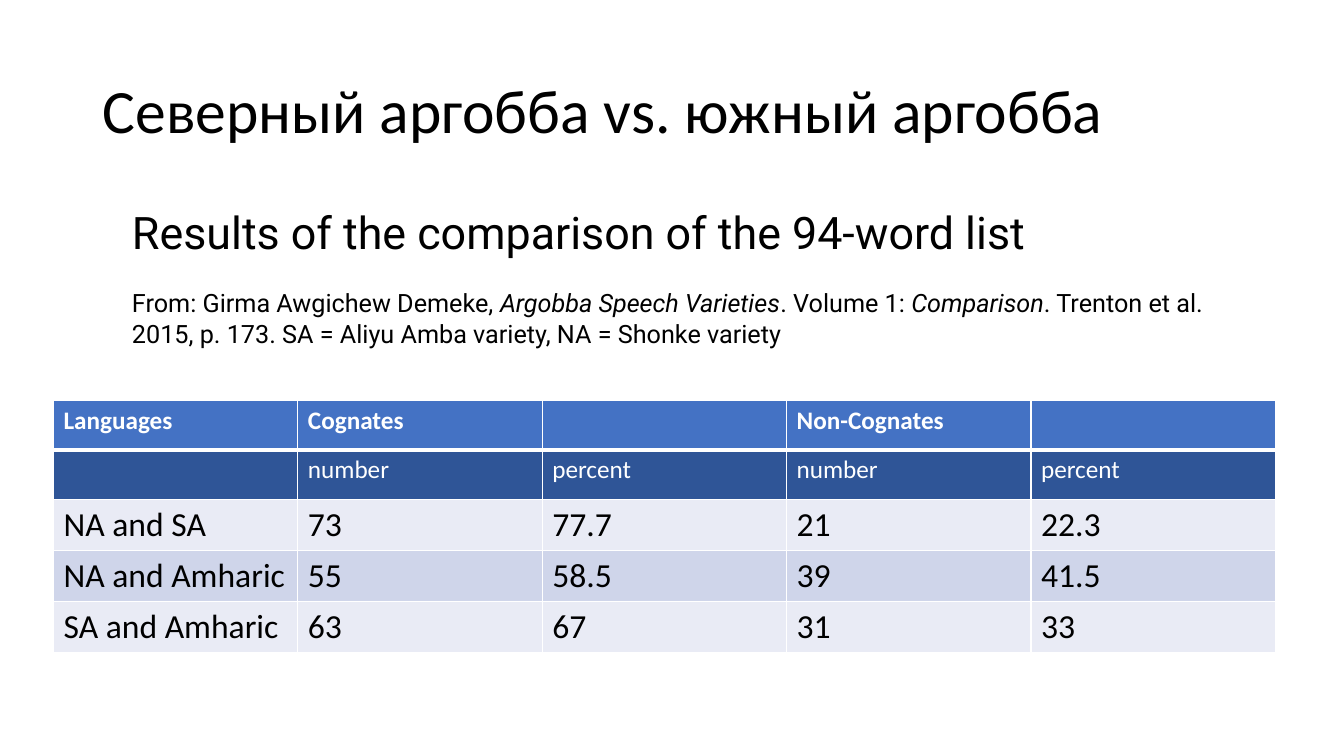
"""Build a slide comparing cognate counts of the Argobba varieties."""
from dataclasses import dataclass

from lxml.etree import SubElement
from pptx import Presentation
from pptx.dml.color import RGBColor as Rgb
from pptx.enum.text import MSO_ANCHOR as Anchor, MSO_AUTO_SIZE as AutoSize, PP_ALIGN as Align
from pptx.oxml.ns import qn
from pptx.util import Inches, Pt

WIDTH, HEIGHT = Inches(13.33), Inches(7.5)


@dataclass(frozen=True)
class Theme:
    body_font: str = "Calibri"
    note_font: str = "Roboto"
    ink: str = "000000"
    paper: str = "FFFFFF"
    header: str = "4472C4"
    subheader: str = "2F5597"
    light_band: str = "E9EBF5"
    dark_band: str = "CFD5EA"
    title_size: int = 44
    heading_size: int = 32
    value_size: int = 24
    small_size: int = 18


@dataclass(frozen=True)
class Area:
    """Position and size in percent of the slide."""
    left: float
    top: float
    width: float
    height: float

    def box(self) -> tuple[int, int, int, int]:
        return (int(WIDTH * self.left / 100), int(HEIGHT * self.top / 100),
                int(WIDTH * self.width / 100), int(HEIGHT * self.height / 100))


@dataclass(frozen=True)
class Row:
    values: tuple[str, ...]
    fill: str
    color: str
    size: int
    bold: bool = False
    top_line: int = 1
    bottom_line: int = 1


THEME = Theme()
TITLE_AREA = Area(6.9, 5.33, 86.27, 19.33)
SOURCE_AREA = Area(9.08, 26.4, 81.85, 20.67)
TABLE_AREA = Area(3.98, 52.93, 90.92, 32.93)

ROWS = (
    Row(("Languages", "Cognates", "", "Non-Cognates", ""), THEME.header,
        THEME.paper, THEME.small_size, bold=True, bottom_line=3),
    Row(("", "number", "percent", "number", "percent"), THEME.subheader,
        THEME.paper, THEME.small_size, top_line=3),
    Row(("NA and SA", "73", "77.7", "21", "22.3"), THEME.light_band,
        THEME.ink, THEME.value_size),
    Row(("NA and Amharic", "55", "58.5", "39", "41.5"), THEME.dark_band,
        THEME.ink, THEME.value_size),
    Row(("SA and Amharic", "63", "67", "31", "33"), THEME.light_band,
        THEME.ink, THEME.value_size),
)

CITATION = (
    ("From: Girma Awgichew Demeke, ", False),
    ("Argobba Speech Varieties", True),
    (". Volume 1: ", False),
    ("Comparison", True),
    (". Trenton et al. 2015, p. 173. SA = Aliyu Amba variety, NA = Shonke variety", False),
)


def write(paragraph, text: str, *, size: int, font: str = THEME.body_font,
          color: str = THEME.ink, bold: bool = False, italic: bool = False) -> None:
    run = paragraph.add_run()
    run.text = text
    run.font.name, run.font.size = font, Pt(size)
    run.font.bold, run.font.italic = bold, italic
    run.font.color.rgb = Rgb.from_string(color)


def draw_border(cell, side: str, width: int) -> None:
    line = SubElement(cell._tc.get_or_add_tcPr(), qn(f"a:ln{side}"), w=str(Pt(width)))
    SubElement(SubElement(line, qn("a:solidFill")), qn("a:srgbClr"), val=THEME.paper)


def fill_row(cells, row: Row) -> None:
    for cell, value in zip(cells, row.values):
        for side, width in zip("LRTB", (1, 1, row.top_line, row.bottom_line)):
            draw_border(cell, side, width)
        cell.fill.solid()
        cell.fill.fore_color.rgb = Rgb.from_string(row.fill)
        if value:
            write(cell.text_frame.paragraphs[0], value, size=row.size,
                  color=row.color, bold=row.bold)


def add_title(slide) -> None:
    title = slide.shapes.title
    title.left, title.top, title.width, title.height = TITLE_AREA.box()
    frame = title.text_frame
    frame.auto_size, frame.vertical_anchor = AutoSize.NONE, Anchor.MIDDLE
    heading = frame.paragraphs[0]
    heading.alignment, heading.line_spacing = Align.LEFT, 0.9
    write(heading, "Северный аргобба vs. южный аргобба", size=THEME.title_size)


def add_source(slide) -> None:
    frame = slide.shapes.add_textbox(*SOURCE_AREA.box()).text_frame
    frame.word_wrap, frame.auto_size = True, AutoSize.SHAPE_TO_FIT_TEXT
    write(frame.paragraphs[0], "Results of the comparison of the 94-word list",
          size=THEME.heading_size, font=THEME.note_font)
    citation = frame.add_paragraph()
    citation.space_before = Pt(21)
    for text, italic in CITATION:
        write(citation, text, size=THEME.small_size, font=THEME.note_font, italic=italic)


def add_cognates(slide) -> None:
    cognates = slide.shapes.add_table(len(ROWS), len(ROWS[0].values), *TABLE_AREA.box()).table
    for table_row, row in zip(cognates.rows, ROWS):
        fill_row(table_row.cells, row)


def main() -> None:
    deck = Presentation()
    deck.slide_width, deck.slide_height = WIDTH, HEIGHT
    slide = deck.slides.add_slide(deck.slide_layouts[5])
    add_title(slide)
    add_cognates(slide)
    add_source(slide)
    deck.save("out.pptx")


if __name__ == "__main__":
    main()
